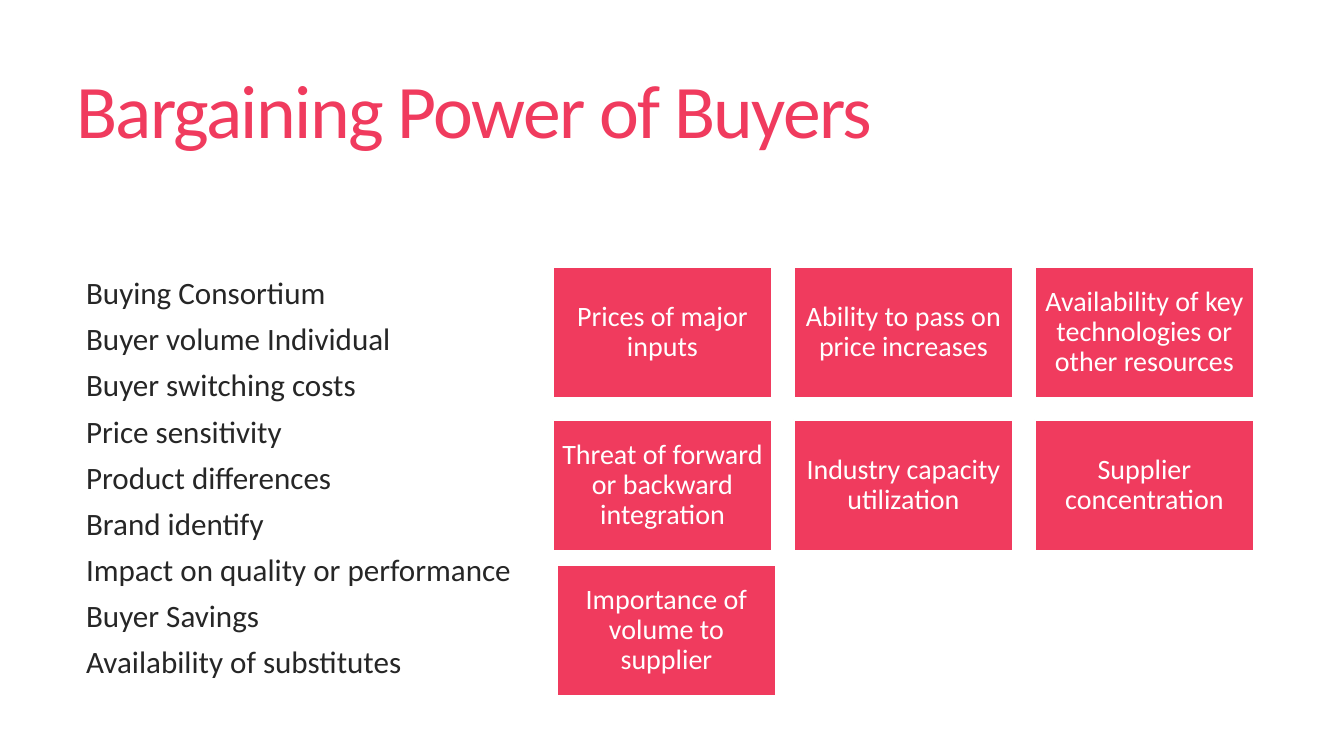
from lxml.etree import SubElement
from pptx import Presentation
from pptx.dml.color import RGBColor
from pptx.enum.shapes import MSO_SHAPE
from pptx.enum.text import MSO_ANCHOR, MSO_AUTO_SIZE, PP_ALIGN
from pptx.oxml.ns import qn
from pptx.util import Emu, Pt

PINK = RGBColor(0xF0, 0x3B, 0x5E)
DARK = RGBColor(0x26, 0x26, 0x26)
WHITE = RGBColor(0xFF, 0xFF, 0xFF)
FONT = "Calibri"

BUYER_FACTORS = [
    "Buying Consortium",
    "Buyer volume Individual",
    "Buyer switching costs",
    "Price sensitivity",
    "Product differences",
    "Brand identify",
    "Impact on quality or performance",
    "Buyer Savings",
    "Availability of substitutes",
]
SUPPLIER_FACTORS = [
    "Prices of major inputs",
    "Ability to pass on price increases",
    "Availability of key technologies or other resources",
    "Threat of forward or backward integration",
    "Industry capacity utilization",
    "Supplier concentration",
]
LAST_FACTOR = "Importance of volume to supplier"

COLUMNS = 3
GRID_LEFT, GRID_TOP = 553, 267
BOX_WIDTH, BOX_HEIGHT = 219, 131
GAP = 22


def px(length):
    """Turn whole pixels into EMU."""
    return Emu(round(length * 914400 / 100.8))


def place(shape, left, top, width, height):
    """Move and size a shape in pixels."""
    shape.left, shape.top = px(left), px(top)
    shape.width, shape.height = px(width), px(height)


def style(paragraph, size, color, line_spacing, align):
    """Format a whole paragraph."""
    paragraph.alignment = align
    paragraph.line_spacing = line_spacing
    font = paragraph.font
    font.name, font.size, font.color.rgb = FONT, Pt(size), color


def fill_title(title, text):
    """Write the slide title with tightened letters."""
    place(title, 66, 43, 948, 145)
    frame = title.text_frame
    frame.text = text
    frame.auto_size = MSO_AUTO_SIZE.NONE
    frame.vertical_anchor = MSO_ANCHOR.MIDDLE
    paragraph = frame.paragraphs[0]
    style(paragraph, 54, PINK, 0.85, PP_ALIGN.LEFT)
    paragraph._p.pPr.find(qn("a:defRPr")).set("spc", "-120")


def fill_list(body, items):
    """Write the unbulleted list."""
    place(body, 66, 277, 465, 427)
    frame = body.text_frame
    frame.text = "\n".join(items)
    frame.auto_size = MSO_AUTO_SIZE.NONE
    frame.vertical_anchor = MSO_ANCHOR.TOP
    for paragraph in frame.paragraphs:
        paragraph.space_before = Pt(13)
        properties = paragraph._p.get_or_add_pPr()
        properties.set("marL", str(px(10)))
        properties.set("indent", "0")
        SubElement(properties, qn("a:buNone"))
        style(paragraph, 22.2, DARK, 0.75, PP_ALIGN.LEFT)


def add_box(slide, text, left, top):
    """Add a pink box with centred white text."""
    box = slide.shapes.add_shape(
        MSO_SHAPE.RECTANGLE, px(left), px(top), px(BOX_WIDTH), px(BOX_HEIGHT))
    box.shadow.inherit = False
    box.fill.solid()
    box.fill.fore_color.rgb = PINK
    box.line.color.rgb = WHITE
    box.line.width = Pt(1)
    frame = box.text_frame
    frame.text = text
    frame.word_wrap = True
    frame.vertical_anchor = MSO_ANCHOR.MIDDLE
    frame.margin_left = frame.margin_right = px(8)
    frame.margin_top = frame.margin_bottom = px(8)
    style(frame.paragraphs[0], 20, WHITE, 0.9, PP_ALIGN.CENTER)


def main():
    """Build and save the slide."""
    presentation = Presentation()
    presentation.slide_width, presentation.slide_height = px(1344), px(756)
    slide = presentation.slides.add_slide(presentation.slide_layouts[1])
    fill_title(slide.shapes.title, "Bargaining Power of Buyers")
    fill_list(slide.placeholders[1], BUYER_FACTORS)
    for index, factor in enumerate(SUPPLIER_FACTORS):
        row, column = divmod(index, COLUMNS)
        add_box(slide, factor,
                GRID_LEFT + column * (BOX_WIDTH + GAP),
                GRID_TOP + row * (BOX_HEIGHT + GAP))
    add_box(slide, LAST_FACTOR, 557, 565)
    presentation.save("out.pptx")


if __name__ == "__main__":
    main()
